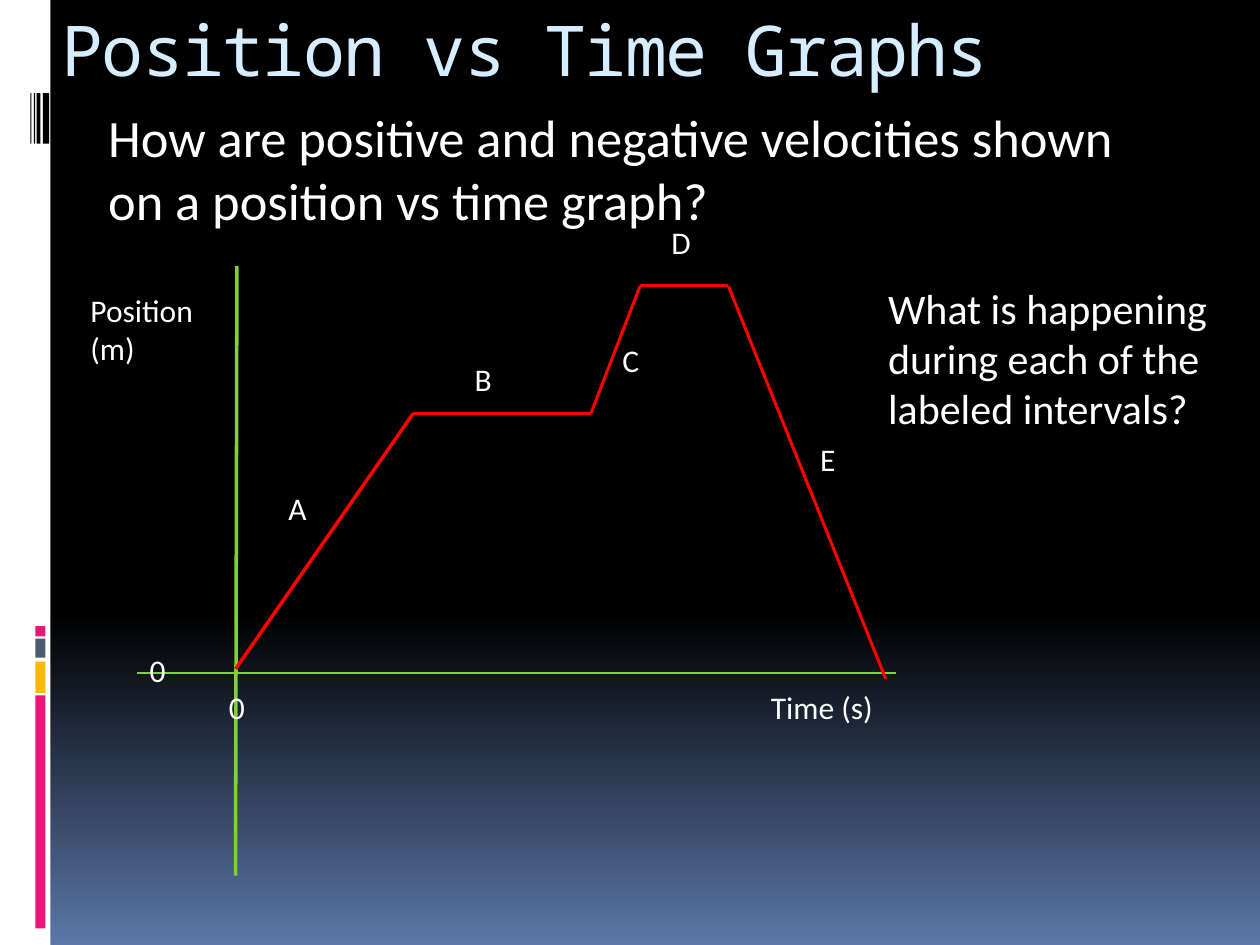
"""Build a slide on reading velocity from a position vs time graph."""
from itertools import pairwise

from pptx import Presentation
from pptx.dml.color import RGBColor
from pptx.enum.shapes import MSO_CONNECTOR, MSO_SHAPE
from pptx.enum.text import MSO_ANCHOR, MSO_AUTO_SIZE as AutoSize, PP_ALIGN
from pptx.oxml.ns import qn
from pptx.util import Pt

BLACK = RGBColor(0x00, 0x00, 0x00)
WHITE = RGBColor(0xFF, 0xFF, 0xFF)
DUSK = RGBColor(0x5B, 0x77, 0xA8)
ICE = RGBColor(0xD6, 0xEC, 0xFF)
PINK = RGBColor(0xEA, 0x15, 0x7A)
AMBER = RGBColor(0xFE, 0xB8, 0x0A)
SLATE = RGBColor(0x4E, 0x5B, 0x6F)
GREEN = RGBColor(0x7F, 0xD1, 0x3B)
RED = RGBColor(0xFF, 0x00, 0x00)

ACCENTS = [(397.4, 133.2, PINK), (378, 18, AMBER), (365, 10.8, SLATE), (357.8, 5.8, PINK)]
BARCODE = [(24.5, 3.6), (20.9, 2.2), (19.4, 0.7), (17.3, 0.7)]
MOTION = [(134.6, 382.3), (236.2, 236.2), (337.7, 236.2),
          (365.8, 163.4), (416.2, 163.4), (506.2, 388.1)]
INTERVALS = [("A", 157.7, 275.8), ("B", 264.2, 202.3), ("C", 348.5, 191.5),
             ("D", 376.6, 123.8), ("E", 461.5, 247.7)]
AXIS_LABELS = [("Position (m)", 44.6, 162.7, 78.5, 47.5),
               ("Time (s)", 433.4, 389.5, 78.5, 27.4),
               ("0", 78.5, 368.6, 33.8, 27.4),
               ("0", 123.8, 389.5, 33.8, 27.4)]


class GraphSlide:
    """Style and drawing methods for one slide."""

    body_font = "Calibri"
    title_font = "Noto Sans Mono"

    def __init__(self, deck):
        self.slide = deck.slides.add_slide(deck.slide_layouts[5])

    def backdrop(self):
        fill = self.slide.background.fill
        fill.gradient()
        fill.gradient_angle = 270
        for stop, position, color in zip(fill.gradient_stops, (0.65, 1), (BLACK, DUSK)):
            stop.position = position
            stop.color.rgb = color

    def block(self, left, top, width, height, color):
        block = self.slide.shapes.add_shape(
            MSO_SHAPE.RECTANGLE, Pt(left), Pt(top), Pt(width), Pt(height))
        block.shadow.inherit = False
        block.fill.solid()
        block.fill.fore_color.rgb = color
        block.line.fill.background()

    def add_words(self, paragraph, words, size, font, color):
        run = paragraph.add_run()
        run.text = words
        run.font.size = Pt(size)
        run.font.name = font
        run.font.color.rgb = color
        return run

    def title(self, words, left, top, width, height):
        title = self.slide.shapes.title
        title.left, title.top, title.width, title.height = map(Pt, (left, top, width, height))
        frame = title.text_frame
        frame.auto_size = AutoSize.NONE
        frame.vertical_anchor = MSO_ANCHOR.TOP
        heading = frame.paragraphs[0]
        heading.alignment = PP_ALIGN.LEFT
        run = self.add_words(heading, words, 40, self.title_font, ICE)
        run._r.get_or_add_rPr().set("spc", "-100")

    def text(self, words, left, top, width, height, size=18):
        box = self.slide.shapes.add_textbox(Pt(left), Pt(top), Pt(width), Pt(height))
        frame = box.text_frame
        frame.word_wrap = True
        frame.auto_size = AutoSize.SHAPE_TO_FIT_TEXT
        self.add_words(frame.paragraphs[0], words, size, self.body_font, WHITE)
        return frame

    def line(self, start, end, color, weight):
        line = self.slide.shapes.add_connector(
            MSO_CONNECTOR.STRAIGHT, *map(Pt, (*start, *end)))
        line.line.color.rgb = color
        line.line.width = Pt(weight)
        properties = line._element.spPr
        properties.append(properties.makeelement(qn("a:effectLst"), {}))


def main():
    deck = Presentation()
    deck.slide_width, deck.slide_height = Pt(720), Pt(540)
    graph = GraphSlide(deck)
    graph.backdrop()

    graph.block(0, 0, 28.8, 540, WHITE)
    for top, height, color in ACCENTS:
        graph.block(20.2, top, 5.8, height, color)
    for left, width in BARCODE:
        graph.block(left, 53.3, width, 28.8, BLACK)

    graph.title("Position vs Time Graphs", 28.1, 0, 612, 72)
    question = graph.text(
        "How are positive and negative velocities shown on a position vs time graph?",
        22.3, 56.2, 641.5, 95.8, 30)
    question.auto_size = AutoSize.NONE
    question.paragraphs[0].space_before = Pt(7)
    question.paragraphs[0]._p.get_or_add_pPr().set("marL", str(Pt(32.4)))

    graph.line((135.4, 151.9), (134.6, 500.4), GREEN, 2)
    graph.line((78.5, 384.5), (511.9, 384.5), GREEN, 0.94)
    for label in AXIS_LABELS:
        graph.text(*label)

    for (letter, left, top), (start, end) in zip(INTERVALS, pairwise(MOTION)):
        graph.line(start, end, RED, 2 if letter == "A" else 1.75)
        graph.text(letter, left, top, 39.6, 28.8)
    graph.text("What is happening during each of the labeled intervals?",
               500.4, 157.7, 219.6, 94.3, 24)

    deck.save("out.pptx")


if __name__ == "__main__":
    main()
